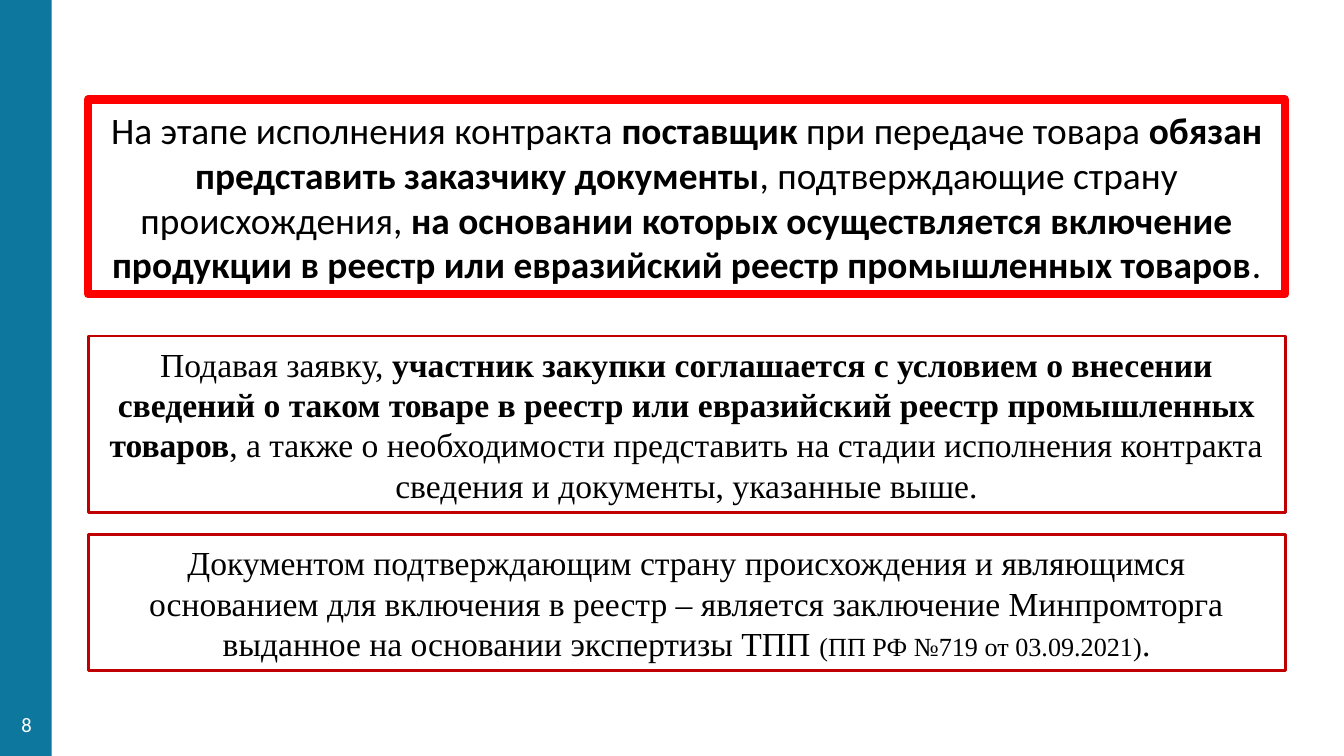
from dataclasses import dataclass

from pptx import Presentation
from pptx import util as u
from pptx.dml.color import RGBColor
from pptx.enum import shapes, text

PX = 9525  # EMU in one px


@dataclass(frozen=True)
class Theme:
    bar: str = "0E779D"
    alert: str = "FF0000"
    edge: str = "C00000"
    ink: str = "000000"
    white: str = "FFFFFF"
    sans: str = "Calibri"
    serif: str = "Times New Roman"
    lead: int = 20
    body: int = 18
    note: int = 14
    page: int = 11


class Deck:
    def __init__(self, theme, wide, high):
        self.theme = theme
        self.file = Presentation()
        self.file.slide_width, self.file.slide_height = wide * PX, high * PX
        self.slide = self.file.slides.add_slide(self.file.slide_layouts[6])

    def rect(self, box, fill=None, line=None, width=0):
        shape = self.slide.shapes.add_shape(
            shapes.MSO_SHAPE.RECTANGLE, *(n * PX for n in box))
        shape.shadow.inherit = False
        if fill:
            shape.fill.solid()
            shape.fill.fore_color.rgb = RGBColor.from_string(fill)
        else:
            shape.fill.background()
        if line:
            shape.line.color.rgb = RGBColor.from_string(line)
            shape.line.width = u.Pt(width)
        else:
            shape.line.fill.background()
        return shape

    def prose(self, shape, runs, face, size, color):
        """Fill a shape with one centred paragraph of (words, bold, size) runs."""
        frame = shape.text_frame
        frame.word_wrap = True
        frame.vertical_anchor = text.MSO_ANCHOR.MIDDLE
        para = frame.paragraphs[0]
        para.alignment = text.PP_ALIGN.CENTER
        para.font.name, para.font.size = face, u.Pt(size)
        para.font.color.rgb = RGBColor.from_string(color)
        for words, strong, own in runs:
            run = para.add_run()
            run.text = words
            if strong:
                run.font.bold = True
            if own:
                run.font.size = u.Pt(own)

    def frame(self, top, high, runs, line, width, face, size):
        shape = self.rect((63, top, 855, high), line=line, width=width)
        self.prose(shape, runs, face, size, self.theme.ink)

    def label(self, box, words, size, color):
        shape = self.slide.shapes.add_textbox(*(n * PX for n in box))
        self.prose(shape, [plain(words)], self.theme.sans, size, color)


def plain(words, size=None):
    return words, False, size


def bold(words):
    return words, True, None


def main():
    look = Theme()
    deck = Deck(look, 960, 540)
    deck.rect((0, 0, 37, 540), fill=look.bar)
    deck.label((0, 503, 38, 29), "8", look.page, look.white)

    duty = [
        plain("На этапе исполнения контракта "),
        bold("поставщик"),
        plain(" при передаче товара "),
        bold("обязан представить заказчику документы"),
        plain(", подтверждающие страну происхождения, "),
        bold("на основании которых осуществляется включение продукции "
             "в реестр или евразийский реестр промышленных товаров"),
        plain("."),
    ]
    consent = [
        plain("Подавая заявку, "),
        bold("участник закупки соглашается с условием о внесении сведений о таком "
             "товаре в реестр или евразийский реестр промышленных товаров"),
        plain(", а также о необходимости представить на стадии исполнения "
              "контракта сведения и документы, указанные выше."),
    ]
    proof = [
        plain("Документом подтверждающим страну происхождения и являющимся "
              "основанием для включения в реестр – является заключение "
              "Минпромторга выданное на основании экспертизы ТПП "),
        plain("(ПП РФ №719 от 03.09.2021)", look.note),
        plain("."),
    ]
    deck.frame(71, 139, duty, look.alert, 4.5, look.sans, look.lead)
    for top, high, runs in ((240, 126, consent), (382, 97, proof)):
        deck.frame(top, high, runs, look.edge, 1.5, look.serif, look.body)
    deck.file.save("out.pptx")


if __name__ == "__main__":
    main()
